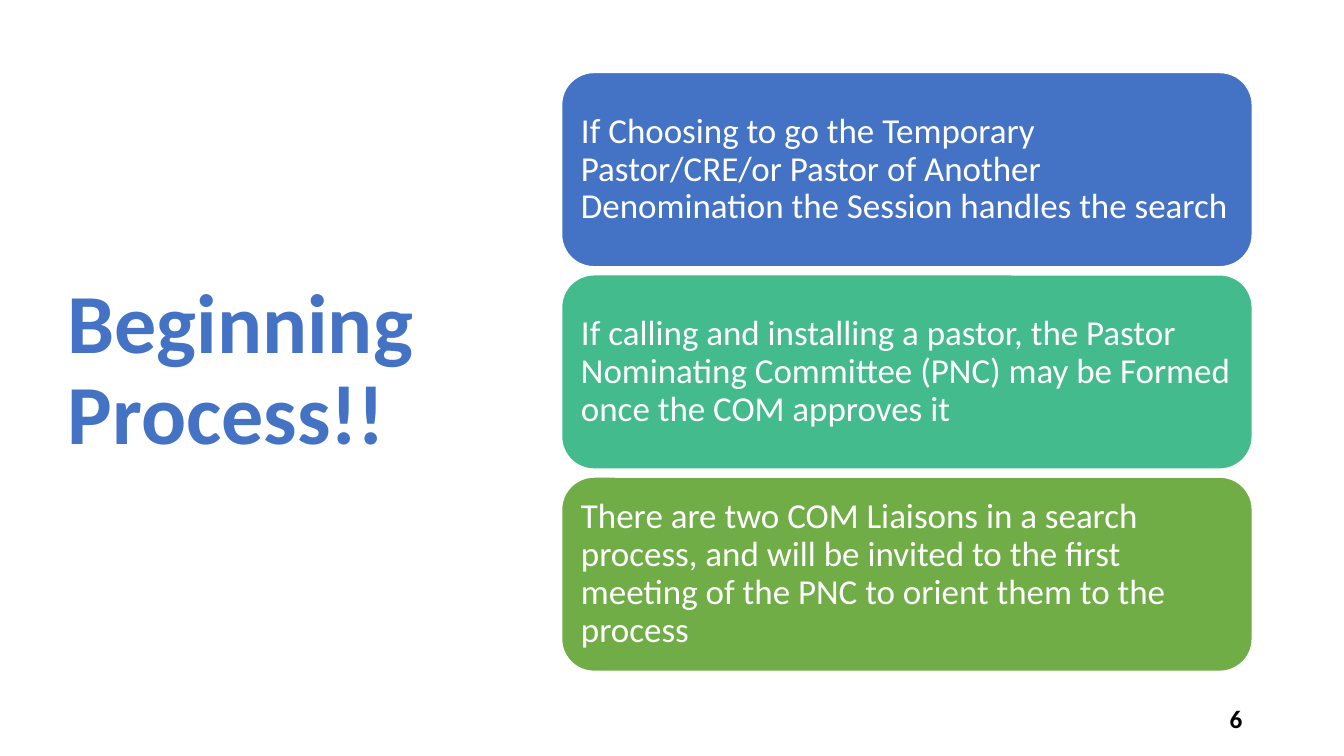
from pptx import Presentation
from pptx.dml.color import RGBColor
from pptx.enum.shapes import MSO_SHAPE as Preset
from pptx.enum.text import MSO_ANCHOR as Anchor, PP_ALIGN as Align
from pptx.util import Inches, Pt

FONT = "Calibri"
BLUE = RGBColor(0x44, 0x72, 0xC4)
TEAL = RGBColor(0x43, 0xBB, 0x8D)
GREEN = RGBColor(0x70, 0xAD, 0x47)
WHITE = RGBColor(0xFF, 0xFF, 0xFF)
BLACK = RGBColor(0x00, 0x00, 0x00)

STEPS = [
    ("If Choosing to go the Temporary Pastor/CRE/or Pastor of Another "
     "Denomination the Session handles the search", BLUE),
    ("If calling and installing a pastor, the Pastor Nominating Committee "
     "(PNC) may be Formed once the COM approves it", TEAL),
    ("There are two COM Liaisons in a search process, and will be invited to "
     "the first meeting of the PNC to orient them to the process", GREEN),
]


def write(frame, text, *, size, color, bold=False, align=Align.LEFT, after=0):
    """Put one formatted, vertically centred paragraph into a text frame."""
    frame.word_wrap = True
    frame.vertical_anchor = Anchor.MIDDLE
    paragraph = frame.paragraphs[0]
    paragraph.alignment = align
    paragraph.line_spacing = 0.9
    paragraph.space_before = Pt(0)
    paragraph.space_after = Pt(after)
    run = paragraph.add_run()
    run.text = text
    run.font.name = FONT
    run.font.size = Pt(size)
    run.font.bold = bold
    run.font.color.rgb = color


def place_title(slide, text, left, top, width, height):
    """Move the title placeholder into its box and fill it."""
    title = slide.shapes.title
    title.left, title.top = Inches(left), Inches(top)
    title.width, title.height = Inches(width), Inches(height)
    write(title.text_frame, text, size=60, color=BLUE, bold=True)


def add_steps(slide, steps, left, top, width, height, gap=0.08):
    """Stack equal rounded cards, one per step, inside the box."""
    card_height = (height - gap * (len(steps) - 1)) / len(steps)
    for index, (text, color) in enumerate(steps):
        card_top = top + index * (card_height + gap)
        card = slide.shapes.add_shape(
            Preset.ROUNDED_RECTANGLE, Inches(left), Inches(card_top),
            Inches(width), Inches(card_height))
        card.shadow.inherit = False
        card.fill.solid()
        card.fill.fore_color.rgb = color
        card.line.color.rgb = WHITE
        card.line.width = Pt(1)
        frame = card.text_frame
        frame.margin_left = frame.margin_right = Inches(0.1)
        frame.margin_top = frame.margin_bottom = Inches(0.1)
        write(frame, text, size=25, color=WHITE)


def add_page_number(slide, number, left, top, width, height):
    """Write the page number at the right of the box."""
    page = slide.shapes.add_textbox(
        Inches(left), Inches(top), Inches(width), Inches(height))
    write(page.text_frame, number, size=18, color=BLACK, bold=True,
          align=Align.RIGHT, after=6)


def main():
    """Build the slide and save it."""
    deck = Presentation()
    deck.slide_width, deck.slide_height = Inches(13.33), Inches(7.5)
    slide = deck.slides.add_slide(deck.slide_layouts[5])
    place_title(slide, "Beginning Process!!", 0.57, 0.68, 4.16, 6.02)
    add_page_number(slide, "6", 9.42, 6.95, 3, 0.4)
    add_steps(slide, STEPS, 5.57, 0.72, 6.85, 5.94)
    deck.save("out.pptx")


if __name__ == "__main__":
    main()
